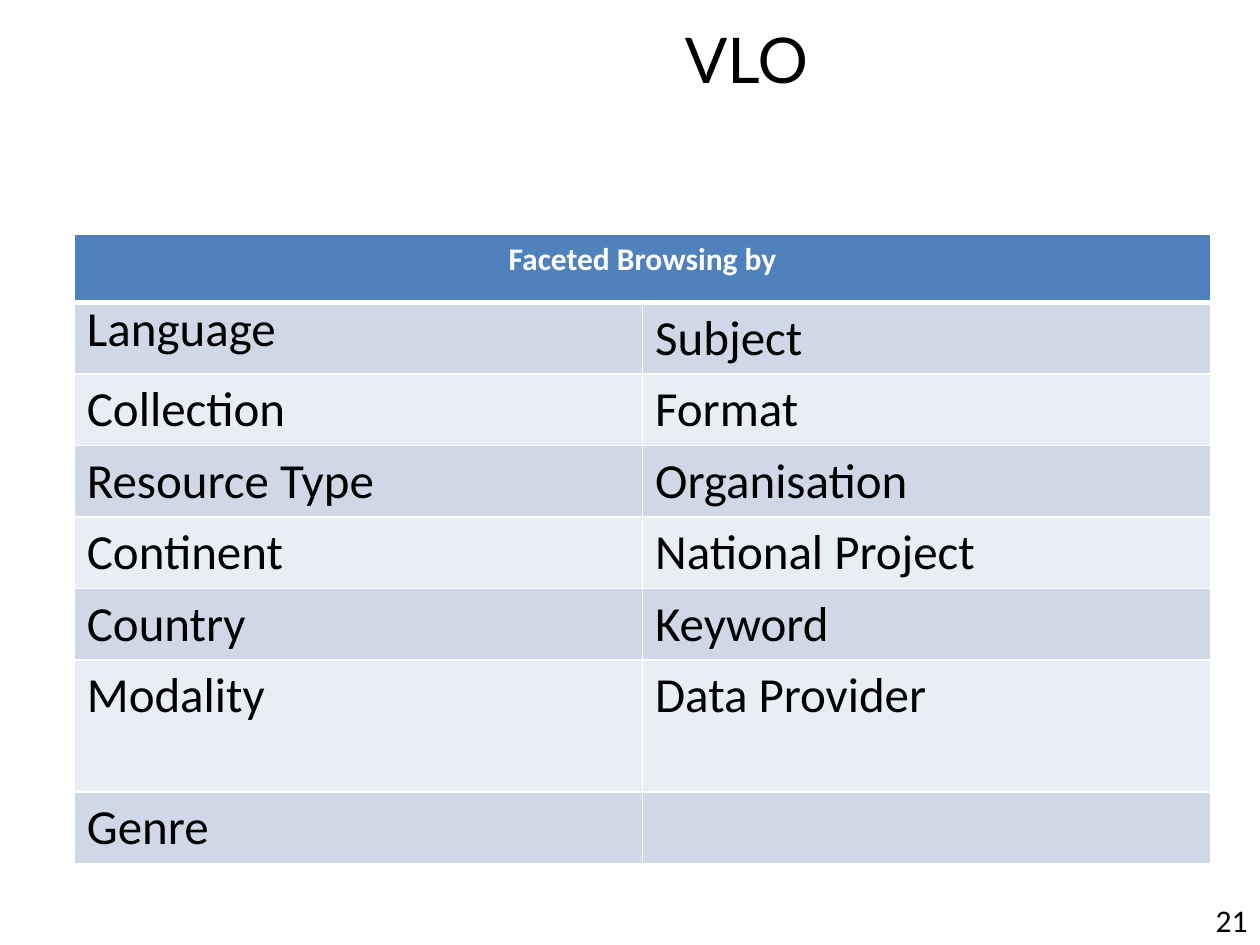
from dataclasses import dataclass

from lxml import etree
from pptx import Presentation
from pptx import util as u
from pptx.dml.color import RGBColor
from pptx.enum import text
from pptx.oxml.ns import qn


@dataclass(frozen=True)
class Theme:
    heading_font: str = "Lato"
    body_font: str = "Calibri"
    ink: str = "000000"
    paper: str = "FFFFFF"
    header: str = "4F81BD"
    bands: tuple = ("D0D8E8", "E9EDF4")
    title_size: int = 36
    facet_size: int = 28
    label_size: int = 18
    rule: int = 1
    header_rule: int = 3


FACETS = [
    ("Language", "Subject"),
    ("Collection", "Format"),
    ("Resource Type", "Organisation"),
    ("Continent", "National Project"),
    ("Country", "Keyword"),
    ("Modality", "Data Provider"),
    ("Genre", ""),
]
HEADER_HEIGHT, FACET_HEIGHT, TALL_HEIGHT = 0.54, 0.55, 1.05
TITLE_ONLY = 5


def write(frame, words, *, font, size, color, bold=False,
          align=text.PP_ALIGN.LEFT, spacing=None):
    paragraph = frame.paragraphs[0]
    paragraph.alignment = align
    if spacing:
        paragraph.line_spacing = spacing
    run = paragraph.add_run()
    run.text = words
    run.font.name = font
    run.font.size = u.Pt(size)
    run.font.bold = bold
    run.font.color.rgb = RGBColor.from_string(color)


class FacetSlide:
    def __init__(self, deck, theme):
        self.theme = theme
        self.slide = deck.slides.add_slide(deck.slide_layouts[TITLE_ONLY])

    def title(self, words, left, top, width, height):
        heading = self.slide.shapes.title
        heading.left, heading.top = u.Inches(left), u.Inches(top)
        heading.width, heading.height = u.Inches(width), u.Inches(height)
        heading.text_frame.vertical_anchor = text.MSO_ANCHOR.MIDDLE
        write(heading.text_frame, words, font=self.theme.heading_font,
              size=self.theme.title_size, color=self.theme.ink,
              align=text.PP_ALIGN.CENTER)

    def page_number(self, number, left, top, width, height):
        page = self.slide.shapes.add_textbox(*map(u.Inches, (left, top, width, height)))
        page.text_frame.word_wrap = True
        write(page.text_frame, number, font=self.theme.body_font,
              size=self.theme.label_size, color=self.theme.ink,
              align=text.PP_ALIGN.RIGHT)

    def paint(self, cell, fill, top, bottom):
        cell.fill.solid()
        cell.fill.fore_color.rgb = RGBColor.from_string(fill)
        properties = cell._tc.get_or_add_tcPr()
        rule = self.theme.rule
        edges = (("a:lnL", rule), ("a:lnR", rule), ("a:lnT", top), ("a:lnB", bottom))
        for position, (edge, points) in enumerate(edges):
            line = etree.Element(qn(edge), w=str(u.Pt(points)))
            solid = etree.SubElement(line, qn("a:solidFill"))
            etree.SubElement(solid, qn("a:srgbClr"), val=self.theme.paper)
            properties.insert(position, line)

    def facet_table(self, heading, facets, left, top, width):
        theme = self.theme
        heights = [HEADER_HEIGHT] + [
            TALL_HEIGHT if pair[0] == "Modality" else FACET_HEIGHT for pair in facets]
        table = self.slide.shapes.add_table(
            len(heights), 2, u.Inches(left), u.Inches(top),
            u.Inches(width), u.Inches(sum(heights))).table
        for row, height in zip(table.rows, heights):
            row.height = u.Inches(height)
        for column in table.columns:
            column.width = u.Inches(width / 2)

        table.cell(0, 0).merge(table.cell(0, 1))
        for cell in table.rows[0].cells:
            self.paint(cell, theme.header, theme.rule, theme.header_rule)
        write(table.cell(0, 0).text_frame, heading, font=theme.body_font,
              size=theme.label_size, color=theme.paper, bold=True,
              align=text.PP_ALIGN.CENTER)

        for index, pair in enumerate(facets):
            above = theme.rule if index else theme.header_rule
            for cell, facet in zip(table.rows[index + 1].cells, pair):
                self.paint(cell, theme.bands[index % 2], above, theme.rule)
                if facet:
                    write(cell.text_frame, facet, font=theme.body_font,
                          size=theme.facet_size, color=theme.ink,
                          spacing=0.8 if facet == "Language" else None)


def main():
    deck = Presentation()
    deck.slide_width, deck.slide_height = u.Inches(10), u.Inches(7.5)
    browsing = FacetSlide(deck, Theme())
    browsing.title("VLO", 1.85, 0, 8.15, 0.92)
    browsing.page_number("21", 8.94, 7.1, 1.06, 0.4)
    browsing.facet_table("Faceted Browsing by", FACETS, 0.59, 1.86, 9.02)
    deck.save("out.pptx")


if __name__ == "__main__":
    main()
